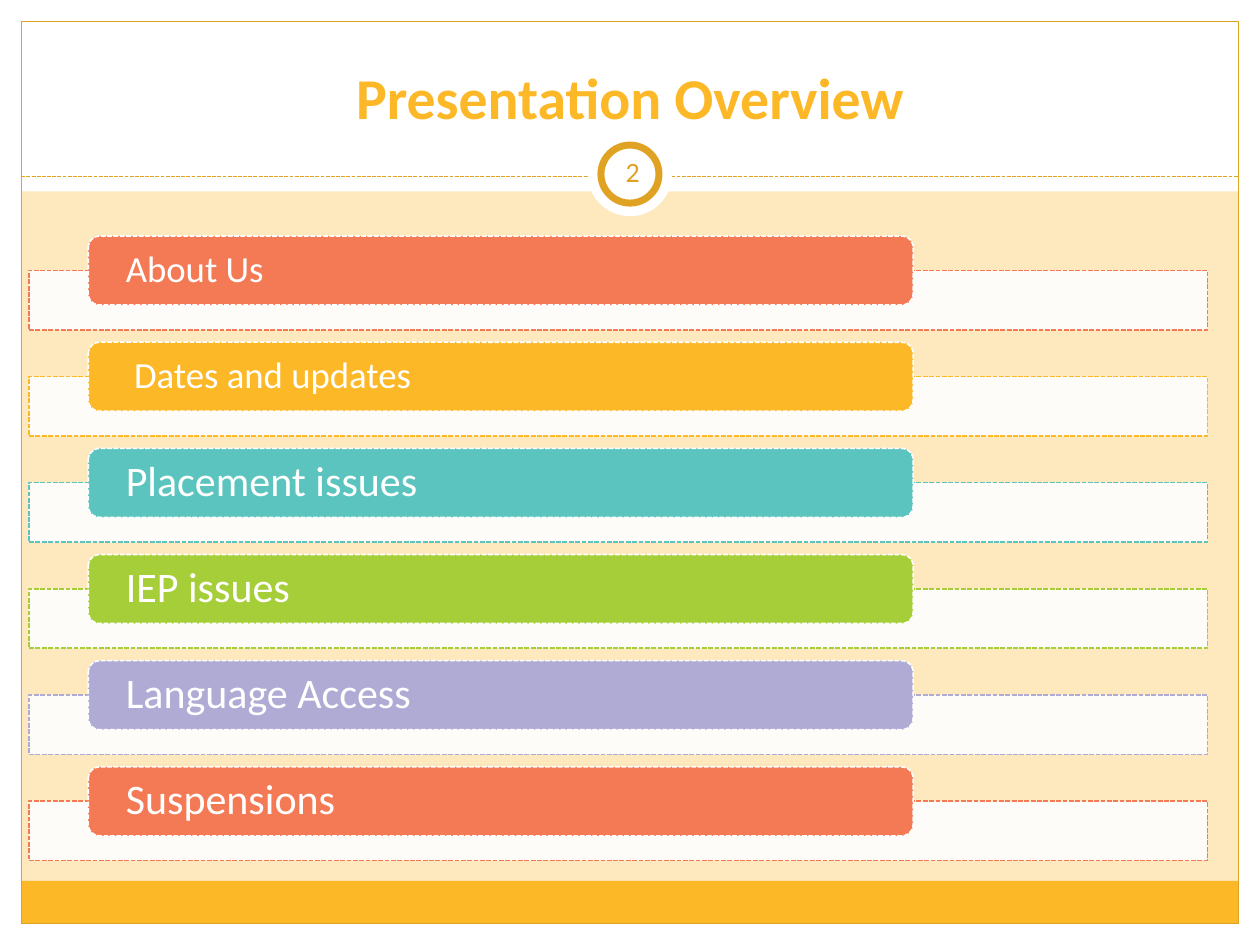
from lxml.etree import SubElement
from pptx import Presentation
from pptx.dml.color import RGBColor
from pptx.enum.dml import MSO_LINE
from pptx.enum.shapes import MSO_CONNECTOR, MSO_SHAPE
from pptx.enum.text import MSO_ANCHOR, MSO_AUTO_SIZE, PP_ALIGN
from pptx.oxml.ns import qn
from pptx.util import Cm, Pt

# Content
TITLE = "Presentation Overview"
NUMBER = "2"
TOPICS = [  # text, size, colour
    ("About Us", 21, "F47A55"),
    (" Dates and updates", 21, "FDB828"),
    ("Placement issues", 24, "5BC4BE"),
    ("IEP issues", 24, "A6CE39"),
    ("Language Access", 24, "B0ABD5"),
    ("Suspensions", 24, "F47A55"),
]
FONT = "Calibri"
WHITE, GOLD, DARK_GOLD, CREAM = "FFFFFF", "FDB828", "DFA223", "FEE9BE"

# Sizes in cm
WIDTH, HEIGHT = 25.4, 19.05
MARGIN = 0.43
RULE_Y = 3.56
FIRST_TOP, PITCH = 4.76, 2.14


def paint(target, colour):
    """Give a fill or a font one solid colour."""
    if hasattr(target, "solid"):
        target.solid()
        target.fore_color.rgb = RGBColor.from_string(colour)
    else:
        target.color.rgb = RGBColor.from_string(colour)


def set_line(line, colour, width, dashed=False):
    paint(line.fill, colour)
    line.width = Pt(width)
    if dashed:
        line.dash_style = MSO_LINE.SQUARE_DOT


def add_box(s, kind, box, fill=None, line=None, width=0.75, dashed=False):
    sp = s.shapes.add_shape(kind, *map(Cm, box))
    sp.shadow.inherit = False
    if fill:
        paint(sp.fill, fill)
    else:
        sp.fill.background()
    if line:
        set_line(sp.line, line, width, dashed)
    else:
        sp.line.fill.background()
    return sp


def add_disc(s, y, size, **style):
    return add_box(s, MSO_SHAPE.OVAL,
                   ((WIDTH - size) / 2, y - size / 2, size, size), **style)


def write(sp, text, size, colour, align, anchor=MSO_ANCHOR.MIDDLE,
          bold=False, inset=0.13):
    tf = sp.text_frame
    tf.text = text
    tf.word_wrap = True
    tf.auto_size = MSO_AUTO_SIZE.NONE
    tf.vertical_anchor = anchor
    tf.margin_left = tf.margin_right = Cm(inset)
    p = tf.paragraphs[0]
    p.alignment = align
    font = p.runs[0].font
    font.name, font.size, font.bold = FONT, Pt(size), bold
    paint(font, colour)
    return p


def add_frame(s):
    paint(s.background.fill, CREAM)
    # White borders and header
    for box in [
        (0, HEIGHT - MARGIN, WIDTH, MARGIN),
        (0, 0, WIDTH, 3.86),
        (0, 0, MARGIN, HEIGHT),
        (WIDTH - MARGIN, 0, MARGIN, HEIGHT),
    ]:
        add_box(s, MSO_SHAPE.RECTANGLE, box, WHITE)
    # Footer band and outline
    inner = WIDTH - 2 * MARGIN
    add_box(s, MSO_SHAPE.RECTANGLE, (MARGIN, 17.76, inner, 0.86), GOLD)
    add_box(s, MSO_SHAPE.RECTANGLE,
            (MARGIN, MARGIN, inner, HEIGHT - 2 * MARGIN), line=DARK_GOLD)
    # Dashed rule with the number ring
    rule = s.shapes.add_connector(MSO_CONNECTOR.STRAIGHT, Cm(MARGIN), Cm(RULE_Y),
                                  Cm(WIDTH - MARGIN), Cm(RULE_Y))
    set_line(rule.line, DARK_GOLD, 0.75, dashed=True)
    SubElement(rule.element.spPr, qn("a:effectLst"))
    add_disc(s, 3.51, 1.7, fill=WHITE)
    add_disc(s, 3.51, 1.17, fill=WHITE, line=DARK_GOLD, width=4)


def add_topic(s, top, text, size, colour):
    panel = add_box(s, MSO_SHAPE.RECTANGLE, (0.58, top + 0.69, 23.76, 1.2),
                    WHITE, colour, 0.9, dashed=True)
    rgb = panel.fill._xPr.find(qn("a:solidFill"))[0]
    SubElement(rgb, qn("a:alpha"), val="90000")
    bar = add_box(s, MSO_SHAPE.ROUNDED_RECTANGLE, (1.78, top, 16.63, 1.39),
                  colour, WHITE, 0.9, dashed=True)
    p = write(bar, text, size, WHITE, PP_ALIGN.LEFT, inset=0.69)
    p.line_spacing = 0.9


def main():
    prs = Presentation()
    prs.slide_width, prs.slide_height = Cm(WIDTH), Cm(HEIGHT)
    s = prs.slides.add_slide(prs.slide_layouts[5])
    add_frame(s)

    # Title, raised above the header
    title = s.shapes.title
    title.left, title.top, title.width, title.height = map(
        Cm, (0.85, 0.64, 23.7, 2.12))
    write(title, TITLE, 33, GOLD, PP_ALIGN.CENTER, MSO_ANCHOR.BOTTOM, bold=True)
    title.element.getparent().append(title.element)

    # Topics
    for i, topic in enumerate(TOPICS):
        add_topic(s, FIRST_TOP + i * PITCH, *topic)

    # Slide number
    number = s.shapes.add_textbox(*map(Cm, (12.12, 2.85, 1.27, 1.22)))
    write(number, NUMBER, 16, DARK_GOLD, PP_ALIGN.CENTER)

    prs.save("out.pptx")


if __name__ == "__main__":
    main()
